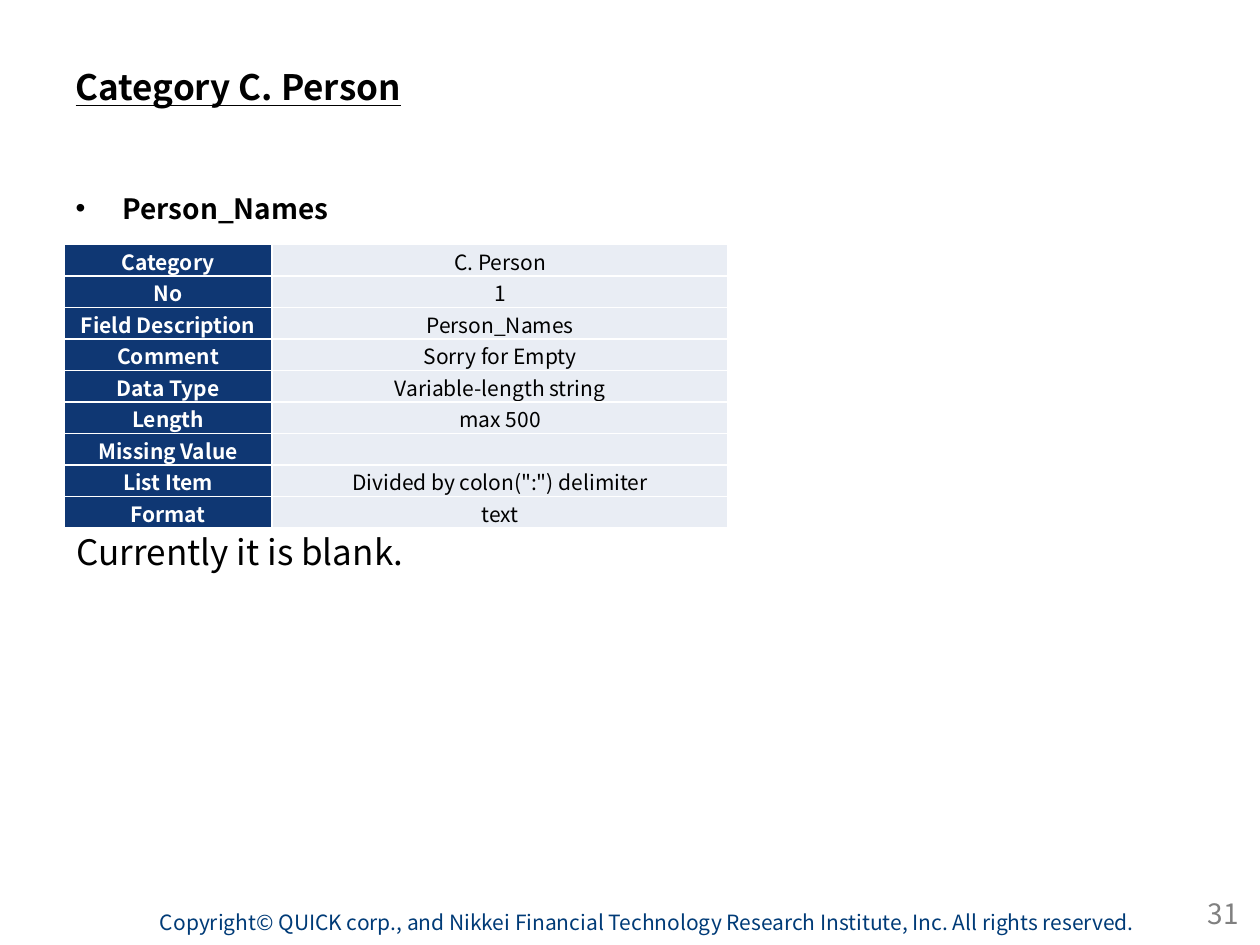
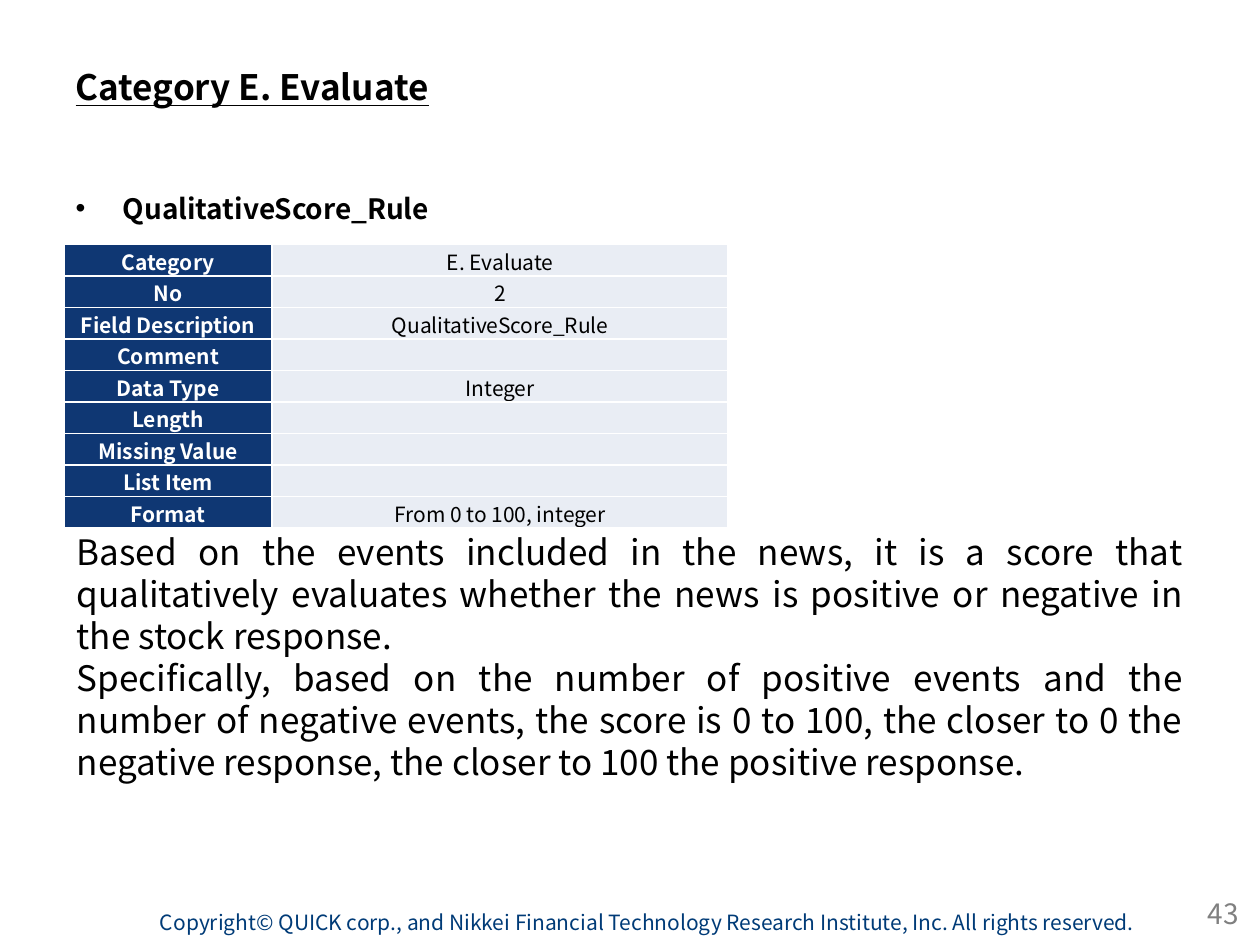
"""Build two data-field reference slides that share one layout."""
from dataclasses import dataclass

from lxml import etree
from pptx import Presentation
from pptx.dml.color import RGBColor
from pptx.enum.shapes import MSO_SHAPE
from pptx.enum.text import MSO_ANCHOR, MSO_AUTO_SIZE, PP_ALIGN
from pptx.oxml.ns import qn
from pptx.util import Inches, Pt

LEFT, CENTER, RIGHT, JUSTIFY = PP_ALIGN.LEFT, PP_ALIGN.CENTER, PP_ALIGN.RIGHT, PP_ALIGN.JUSTIFY
TOP, MIDDLE = MSO_ANCHOR.TOP, MSO_ANCHOR.MIDDLE
NO_FIT, GROW = MSO_AUTO_SIZE.NONE, MSO_AUTO_SIZE.SHAPE_TO_FIT_TEXT
RECTANGLE = MSO_SHAPE.RECTANGLE

FONT = "Noto Sans CJK JP"
COLORS = {
    "text": "000000",
    "white": "FFFFFF",
    "label": "0F3773",
    "value": "E9EDF4",
    "copyright": "003B77",
    "number": "808080",
}
COPYRIGHT = (
    "Copyright© QUICK corp., and Nikkei Financial Technology Research Institute, Inc. "
    "All rights reserved."
)
LABELS = (
    "Category", "No", "Field Description", "Comment", "Data Type",
    "Length", "Missing Value", "List Item", "Format",
)
COLUMN_WIDTHS = (1.65, 3.62)
ROW_HEIGHT = 0.25


@dataclass(frozen=True)
class FieldSlide:
    """Content of one field description slide."""

    title: str
    field: str
    values: tuple[str, ...]
    remarks: tuple[str, ...]
    number: int
    remark_height: float
    remark_align: PP_ALIGN = LEFT


SLIDES = (
    FieldSlide(
        title="Category C. Person",
        field="Person_Names",
        values=(
            "C. Person", "1", "Person_Names", "Sorry for Empty", "Variable-length string",
            "max 500", "", 'Divided by colon(":") delimiter', "text",
        ),
        remarks=("Currently it is blank.",),
        number=31,
        remark_height=0.44,
    ),
    FieldSlide(
        title="Category E. Evaluate",
        field="QualitativeScore_Rule",
        values=(
            "E. Evaluate", "2", "QualitativeScore_Rule", "", "Integer",
            "", "", "", "From 0 to 100, integer",
        ),
        remarks=(
            "Based on the events included in the news, it is a score that qualitatively "
            "evaluates whether the news is positive or negative in the stock response.",
            "Specifically, based on the number of positive events and the number of negative "
            "events, the score is 0 to 100, the closer to 0 the negative response, the closer "
            "to 100 the positive response.",
        ),
        number=43,
        remark_height=2.12,
        remark_align=JUSTIFY,
    ),
)


def rgb(name: str) -> RGBColor:
    """Return a palette colour."""
    return RGBColor.from_string(COLORS[name])


def write(tf, lines, size: float, color="text", bold=False, align=LEFT) -> None:
    """Fill a text frame with evenly formatted paragraphs."""
    for i, line in enumerate(lines):
        p = tf.paragraphs[0] if i == 0 else tf.add_paragraph()
        p.text = line
        p.alignment = align
        p.space_before = Pt(0)
        p.font.name = FONT
        p.font.size = Pt(size)
        p.font.bold = bold
        p.font.color.rgb = rgb(color)


def place(shape, left: float, top: float, width: float, height: float) -> None:
    """Move and size a shape, in inches."""
    shape.left, shape.top = Inches(left), Inches(top)
    shape.width, shape.height = Inches(width), Inches(height)


def add_text(s, box, lines, size: float, color="text", align=LEFT, anchor=TOP, fit=NO_FIT) -> None:
    """Add a wrapping text box."""
    tf = s.shapes.add_textbox(*map(Inches, box)).text_frame
    tf.word_wrap = True
    tf.auto_size = fit
    tf.vertical_anchor = anchor
    write(tf, lines, size, color, align=align)


def add_copyright(s) -> None:
    """Add the copyright band at the foot of the slide."""
    sp = s.shapes.add_shape(RECTANGLE, Inches(1.27), Inches(7.22), Inches(7.86), Inches(0.2))
    sp.shadow.inherit = False
    sp.fill.solid()
    sp.fill.fore_color.rgb = rgb("white")
    sp.line.fill.background()
    tf = sp.text_frame
    tf.margin_left = tf.margin_right = tf.margin_top = tf.margin_bottom = 0
    tf.word_wrap = False
    tf.auto_size = GROW
    tf.vertical_anchor = TOP
    write(tf, [COPYRIGHT], 12, "copyright")


def add_borders(cell) -> None:
    """Draw thin white lines on all sides of a cell."""
    tc_pr = cell._tc.get_or_add_tcPr()
    for side in ("lnL", "lnR", "lnT", "lnB"):
        ln = etree.SubElement(tc_pr, qn(f"a:{side}"), w=str(Pt(1)))
        fill = etree.SubElement(ln, qn("a:solidFill"))
        etree.SubElement(fill, qn("a:srgbClr"), val=COLORS["white"])


def format_cell(cell, text: str, is_label: bool) -> None:
    """Write and format one table cell."""
    cell.margin_left = cell.margin_right = cell.margin_top = Inches(0.01)
    cell.margin_bottom = 0
    cell.vertical_anchor = MIDDLE
    add_borders(cell)
    cell.fill.solid()
    cell.fill.fore_color.rgb = rgb("label" if is_label else "value")
    write(cell.text_frame, [text], 12, "white" if is_label else "text", is_label, CENTER)


def add_field_table(s, values: tuple[str, ...]) -> None:
    """Add the two-column table of field properties."""
    table = s.shapes.add_table(
        len(LABELS), len(COLUMN_WIDTHS), Inches(0.51), Inches(1.94),
        Inches(sum(COLUMN_WIDTHS)), Inches(ROW_HEIGHT * len(LABELS)),
    ).table
    table.first_row = table.horz_banding = False
    for column, width in zip(table.columns, COLUMN_WIDTHS):
        column.width = Inches(width)
    for i, row in enumerate(zip(LABELS, values)):
        table.rows[i].height = Inches(ROW_HEIGHT)
        for j, text in enumerate(row):
            format_cell(table.cell(i, j), text, is_label=j == 0)


def add_field_slide(prs, content: FieldSlide) -> None:
    """Add one complete field slide."""
    s = prs.slides.add_slide(prs.slide_layouts[1])
    title, body = s.placeholders
    place(title, 0.5, 0.3, 9, 0.77)
    title.text_frame.vertical_anchor = MIDDLE
    write(title.text_frame, [content.title], 20, bold=True)
    title.text_frame.paragraphs[0].font.underline = True
    place(body, 0.5, 1.47, 9, 5.35)
    body.text_frame.auto_size = NO_FIT
    write(body.text_frame, [content.field], 16, bold=True)
    add_copyright(s)
    add_field_table(s, content.values)
    add_text(s, (7.6, 7.05, 2.33, 0.4), [str(content.number)], 16, "number", RIGHT, MIDDLE)
    add_text(s, (0.51, 4.16, 8.98, content.remark_height), content.remarks, 20,
             align=content.remark_align, fit=GROW)


def main() -> None:
    """Build and save the presentation."""
    prs = Presentation()
    prs.slide_width, prs.slide_height = Inches(10), Inches(7.5)
    for content in SLIDES:
        add_field_slide(prs, content)
    prs.save("out.pptx")


if __name__ == "__main__":
    main()
